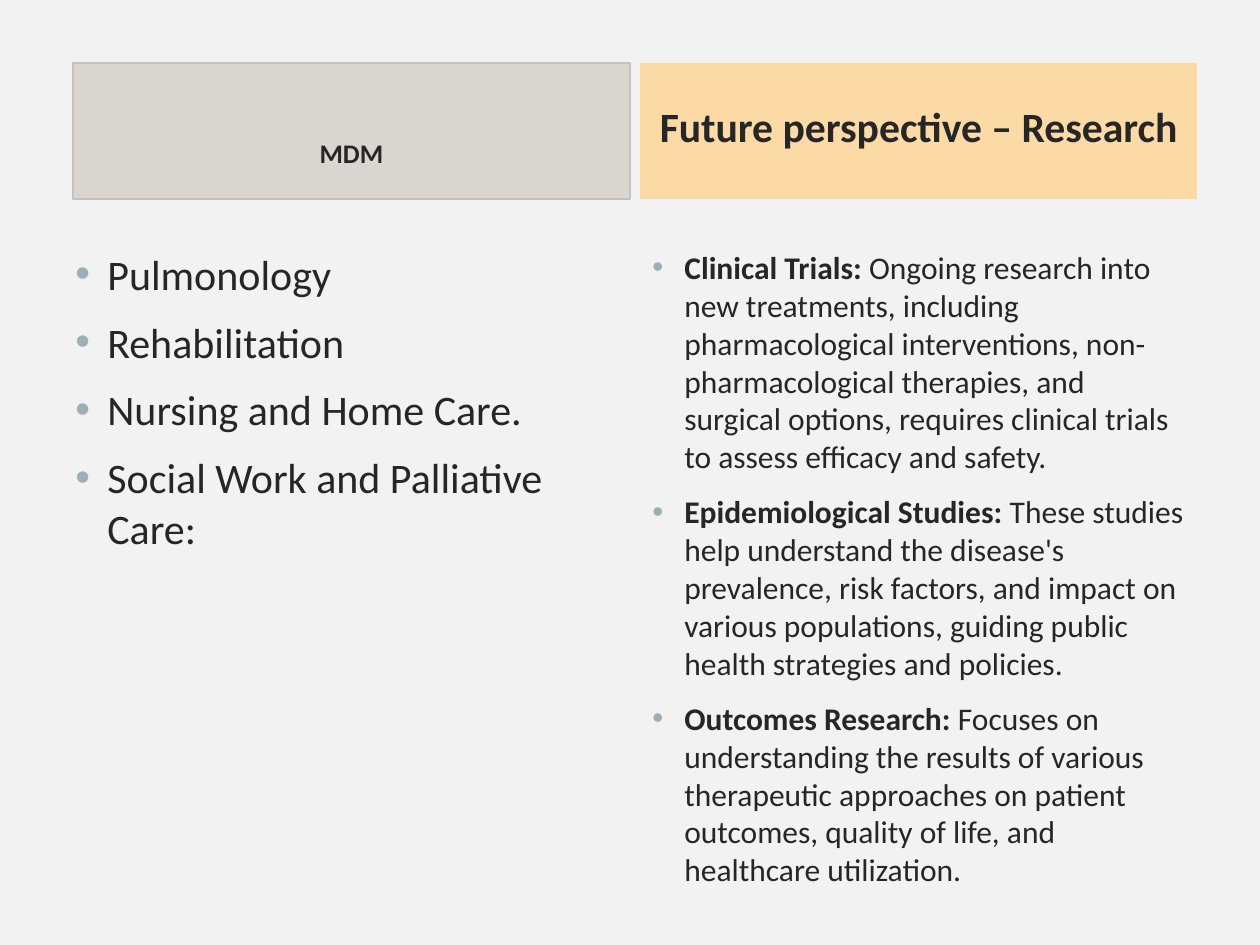
from lxml import etree
from pptx import Presentation
from pptx.dml.color import RGBColor
from pptx.enum import shapes, text
from pptx.oxml.ns import qn
from pptx.util import Emu, Pt

PX = 914400 / 126  # EMU per px
COLORS = {
    "background": "F2F2F2",
    "text": "262626",
    "bullet": "9BAFB5",
    "grey": "D9D6D1",
    "grey_line": "C6C1BA",
    "orange": "FBDAA5",
}
COLUMN_W = 557
HEADER_Y, HEADER_H = 63, 136
BODY_Y, BODY_H = 242, 602
INDENT = 32

SPECIALTIES = [
    [("Pulmonology", False)],
    [("Rehabilitation", False)],
    [("Nursing and Home Care.", False)],
    [("Social Work and Palliative Care:", False)],
]
RESEARCH = [
    [("Clinical Trials:", True),
     (" Ongoing research into new treatments, including pharmacological "
      "interventions, non-pharmacological therapies, and surgical options, "
      "requires clinical trials to assess efficacy and safety.", False)],
    [("Epidemiological Studies:", True),
     (" These studies help understand the disease's prevalence, risk factors, "
      "and impact on various populations, guiding public health strategies "
      "and policies.", False)],
    [("Outcomes Research:", True),
     (" Focuses on understanding the results of various therapeutic approaches "
      "on patient outcomes, quality of life, and healthcare utilization.", False)],
]


def px(n):
    return Emu(round(n * PX))


def color(name):
    return RGBColor.from_string(COLORS[name])


def add_run(p, content, size, bold=False):
    r = p.add_run()
    r.text = content
    r.font.name = "Calibri"
    r.font.size = Pt(size)
    r.font.bold = bold
    r.font.color.rgb = color("text")


def set_bullet(p):
    pPr = p._p.get_or_add_pPr()
    pPr.set("marL", str(px(INDENT)))
    pPr.set("indent", str(-px(INDENT)))
    clr = etree.SubElement(pPr, qn("a:buClr"))
    etree.SubElement(clr, qn("a:srgbClr"), val=COLORS["bullet"])
    etree.SubElement(pPr, qn("a:buFont"), typeface="Arial")
    etree.SubElement(pPr, qn("a:buChar"), char="•")


def add_header(slide, x, label, size, fill, bottom, line=None):
    sp = slide.shapes.add_shape(shapes.MSO_SHAPE.RECTANGLE, px(x), px(HEADER_Y),
                                px(COLUMN_W), px(HEADER_H))
    sp.shadow.inherit = False
    sp.fill.solid()
    sp.fill.fore_color.rgb = color(fill)
    if line:
        sp.line.color.rgb = color(line)
        sp.line.width = Pt(0.75)
    else:
        sp.line.fill.background()
    tf = sp.text_frame
    tf.word_wrap = True
    tf.vertical_anchor = text.MSO_ANCHOR.BOTTOM
    tf.margin_bottom = px(bottom)
    p = tf.paragraphs[0]
    p.alignment = text.PP_ALIGN.CENTER
    p.line_spacing = 0.8
    add_run(p, label, size, bold=True)


def add_bullets(slide, x, items, size):
    tf = slide.shapes.add_textbox(px(x), px(BODY_Y), px(COLUMN_W), px(BODY_H)).text_frame
    tf.word_wrap = True
    for i, runs in enumerate(items):
        p = tf.add_paragraph() if i else tf.paragraphs[0]
        p.space_before = Pt(10)
        set_bullet(p)
        for content, bold in runs:
            add_run(p, content, size, bold)


def main():
    prs = Presentation()
    prs.slide_width, prs.slide_height = px(1260), px(945)
    slide = prs.slides.add_slide(prs.slide_layouts[6])
    slide.background.fill.solid()
    slide.background.fill.fore_color.rgb = color("background")

    # Left column: care team
    add_header(slide, 73, "MDM", 15.3, "grey", 30, line="grey_line")
    add_bullets(slide, 63, SPECIALTIES, 24)

    # Right column: research
    add_header(slide, 640, "Future perspective – Research", 23.8, "orange", 48)
    add_bullets(slide, 640, RESEARCH, 18)

    prs.save("out.pptx")


if __name__ == "__main__":
    main()
